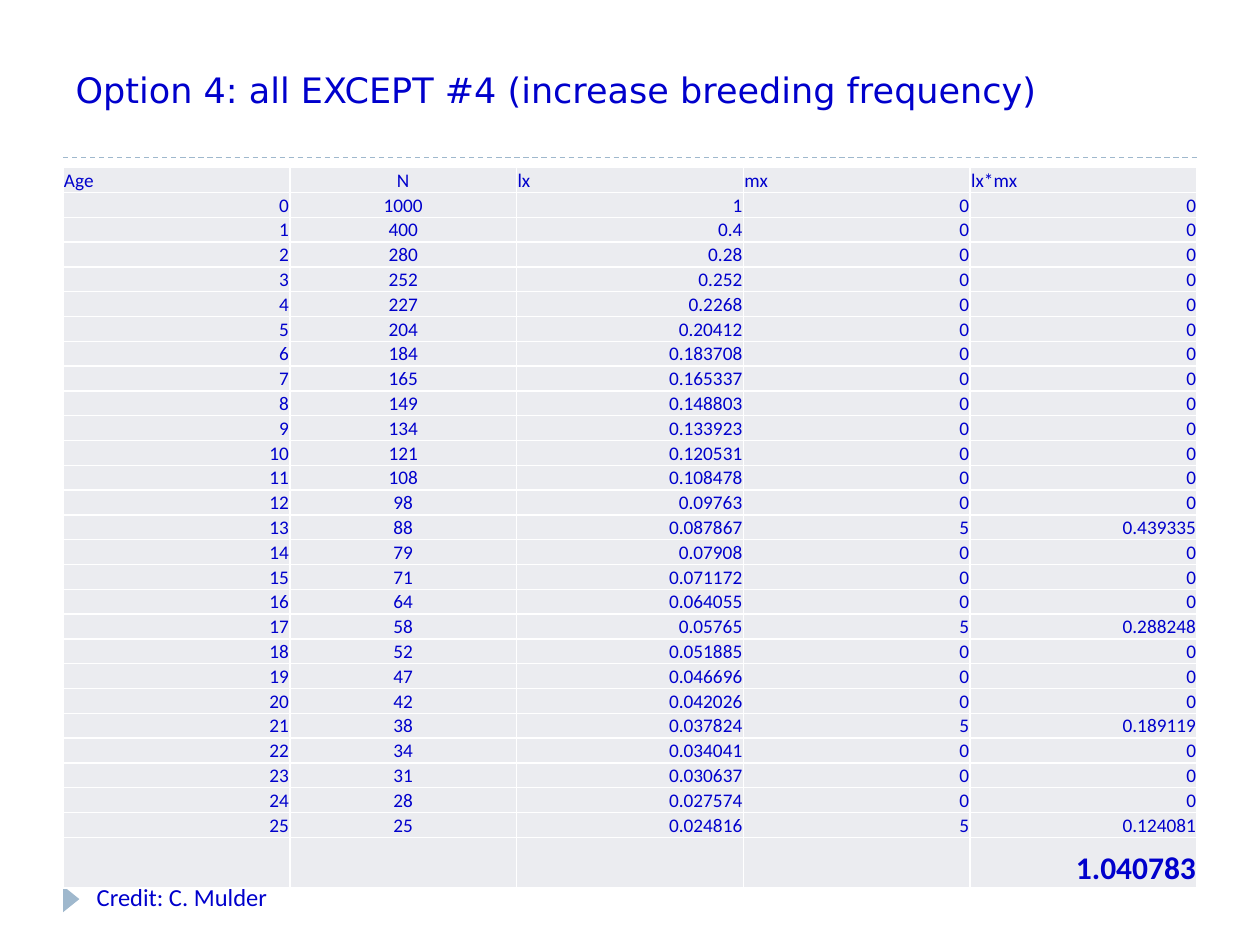
from lxml import etree
from pptx import Presentation
from pptx import util as u
from pptx.dml.color import RGBColor
from pptx.enum import dml, shapes, text
from pptx.oxml.ns import qn

TITLE = "Option 4: all EXCEPT #4 (increase breeding frequency)"
CREDIT = "Credit: C. Mulder"
HEADS = ["Age", "N", "lx", "mx", "lx*mx"]
TOTAL = "1.040783"

# One entry per year of age, from 0
COUNTS = [1000, 400, 280, 252, 227, 204, 184, 165, 149, 134, 121, 108, 98,
          88, 79, 71, 64, 58, 52, 47, 42, 38, 34, 31, 28, 25]
ALIVE = ["1", "0.4", "0.28", "0.252", "0.2268", "0.20412", "0.183708",
         "0.165337", "0.148803", "0.133923", "0.120531", "0.108478",
         "0.09763", "0.087867", "0.07908", "0.071172", "0.064055", "0.05765",
         "0.051885", "0.046696", "0.042026", "0.037824", "0.034041",
         "0.030637", "0.027574", "0.024816"]
# Breeding age: (mx, lx*mx); every other age has no young
BREED = {13: ("5", "0.439335"), 17: ("5", "0.288248"),
         21: ("5", "0.189119"), 25: ("5", "0.124081")}

THEME = {
    "ink": RGBColor.from_string("0000CC"),
    "accent": RGBColor.from_string("9FB8CD"),
    "cell": RGBColor.from_string("EBECF0"),
    "border": "FFFFFF",
    "head": "DejaVu Sans", "body": "Calibri",
    "title": 20, "table": 11, "total": 18, "credit": 14,
}
LEFT, WIDTH = u.Cm(1.27), u.Cm(22.86)
ROW, LAST = u.Cm(0.486), u.Cm(1.02)
SIDE = text.PP_ALIGN


def style(par, size, face, align=SIDE.LEFT, bold=False):
    par.alignment = align
    for run in par.runs:
        font = run.font
        font.size, font.name, font.bold = u.Pt(size), face, bold
        font.color.rgb = THEME["ink"]


def edge(cell):
    """Draw a thin border on all four sides of a cell."""
    props = cell._tc.get_or_add_tcPr()
    for side in ("lnL", "lnR", "lnT", "lnB"):
        line = etree.SubElement(props, qn("a:" + side), w=str(u.Pt(1)))
        fill = etree.SubElement(line, qn("a:solidFill"))
        etree.SubElement(fill, qn("a:srgbClr"), val=THEME["border"])


def add_title(slide):
    title = slide.shapes.title
    title.left, title.top = LEFT, u.Cm(0.43)
    title.width, title.height = WIDTH, u.Cm(2.74)
    frame = title.text_frame
    frame.text = TITLE
    frame.vertical_anchor = text.MSO_ANCHOR.MIDDLE
    style(frame.paragraphs[0], THEME["title"], THEME["head"])


def add_rule(slide, y):
    rule = slide.shapes.add_connector(
        shapes.MSO_CONNECTOR.STRAIGHT, LEFT, y, LEFT + WIDTH, y)
    rule.line.color.rgb = THEME["accent"]
    rule.line.width = u.Pt(0.75)
    rule.line.dash_style = dml.MSO_LINE.DASH
    etree.SubElement(rule._element.spPr, qn("a:effectLst"))


def add_marker(slide):
    mark = slide.shapes.add_shape(
        shapes.MSO_SHAPE.ISOSCELES_TRIANGLE,
        u.Cm(1.17), u.Cm(17.96), u.Cm(0.53), u.Cm(0.33))
    mark.rotation = 90
    mark.shadow.inherit = False
    mark.fill.solid()
    mark.fill.fore_color.rgb = THEME["accent"]
    mark.line.fill.background()


def add_grid(slide):
    rows = [HEADS]
    for age, (count, alive) in enumerate(zip(COUNTS, ALIVE)):
        rows.append([str(age), str(count), alive, *BREED.get(age, ("0", "0"))])
    rows.append([""] * 4 + [TOTAL])
    end = len(rows) - 1
    table = slide.shapes.add_table(
        len(rows), len(HEADS), LEFT, u.Cm(3.38), WIDTH, ROW * end + LAST).table
    table.first_row = table.horz_banding = False
    for r, row in enumerate(rows):
        table.rows[r].height = LAST if r == end else ROW
        for c, value in enumerate(row):
            cell = table.cell(r, c)
            edge(cell)
            cell.fill.solid()
            cell.fill.fore_color.rgb = THEME["cell"]
            cell.margin_left = cell.margin_right = cell.margin_top = u.Cm(0.02)
            cell.margin_bottom = 0
            cell.vertical_anchor = text.MSO_ANCHOR.BOTTOM
            cell.text_frame.text = value
            if c == 1:
                align = SIDE.CENTER
            else:
                align = SIDE.RIGHT if r else SIDE.LEFT
            style(cell.text_frame.paragraphs[0],
                  THEME["total" if r == end else "table"],
                  THEME["body"], align, r == end)


def add_credit(slide):
    box = slide.shapes.add_textbox(
        u.Cm(1.7), u.Cm(17.65), u.Cm(5.51), u.Cm(1.02))
    frame = box.text_frame
    frame.word_wrap = True
    frame.text = CREDIT
    style(frame.paragraphs[0], THEME["credit"], THEME["body"])


def main():
    deck = Presentation()
    deck.slide_width, deck.slide_height = u.Cm(25.4), u.Cm(19.05)
    slide = deck.slides.add_slide(deck.slide_layouts[5])
    add_title(slide)
    add_rule(slide, u.Cm(3.17))
    add_marker(slide)
    add_grid(slide)
    add_credit(slide)
    deck.save("out.pptx")


if __name__ == "__main__":
    main()
